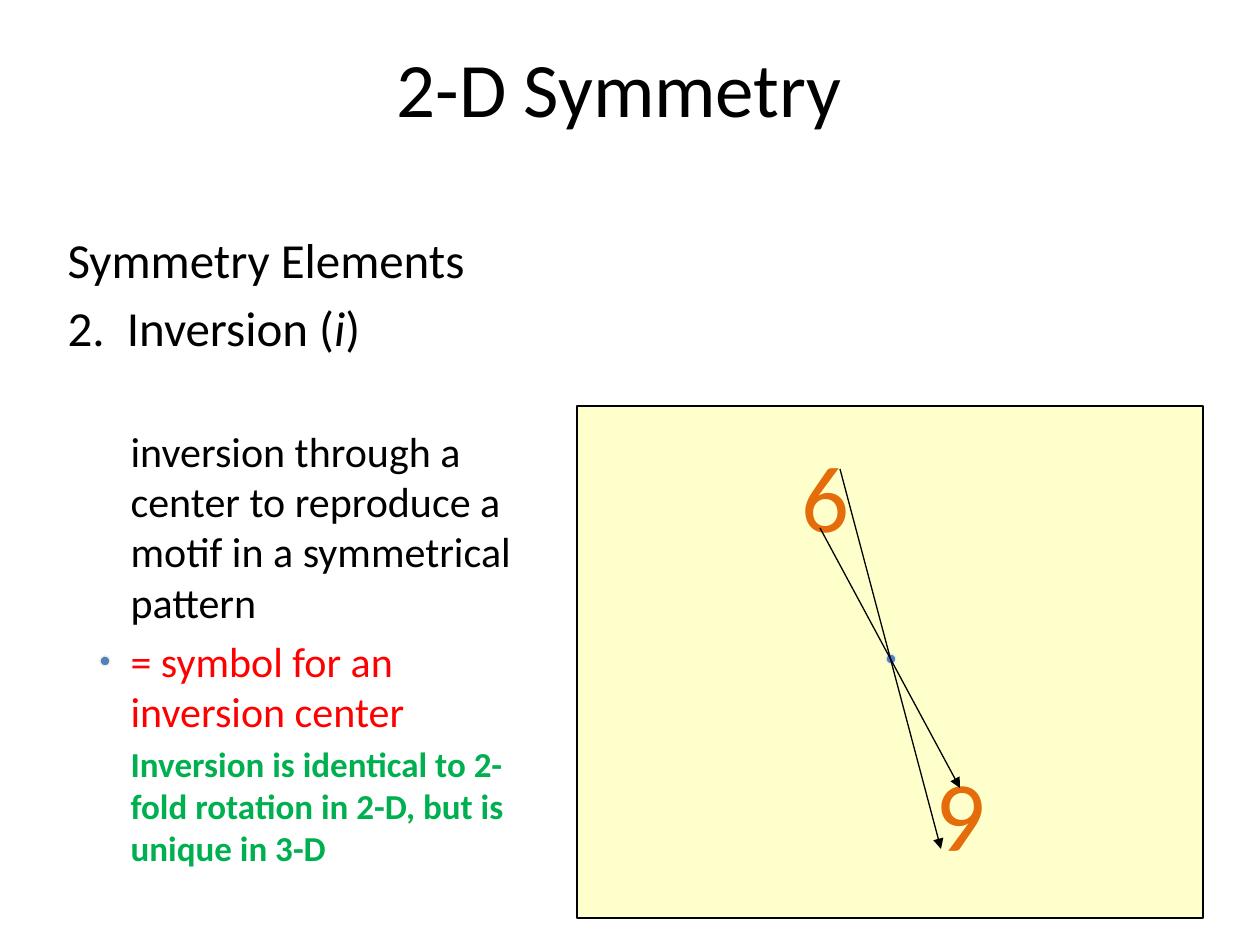
from dataclasses import dataclass
from typing import NamedTuple

from lxml import etree
from pptx import Presentation
from pptx import util as u
from pptx.dml.color import RGBColor
from pptx.enum import shapes as sh, text as tx
from pptx.oxml.ns import qn

SCALE = 914400 / 126


@dataclass(frozen=True)
class Theme:
    font: str = "Calibri"
    ink: str = "000000"
    red: str = "FF0000"
    green: str = "00B050"
    orange: str = "E46C0A"
    panel: str = "FFFFCC"
    dot: str = "4F81BD"
    rim: str = "EEECE1"
    title: int = 44
    head: int = 28
    body: int = 24
    note: int = 20
    motif: int = 54
    line: float = 0.75


class Box(NamedTuple):
    x: int
    y: int
    w: int
    h: int


class Ray(NamedTuple):
    x1: int
    y1: int
    x2: int
    y2: int


class Motif(NamedTuple):
    box: Box
    turn: int


class Line(NamedTuple):
    text: str
    size: int
    color: str
    level: int = 0
    bold: bool = False
    gap: int | None = None


T = Theme()
TITLE = Box(84, 0, 1071, 173)
BODY = Box(55, 223, 512, 697)
PANEL = Box(577, 406, 626, 512)
DOTS = [Box(100, 656, 10, 10), Box(886, 654, 10, 10)]
MOTIFS = [Motif(Box(789, 432, 74, 127), 0), Motif(Box(925, 761, 74, 127), 180)]
RAYS = [Ray(840, 469, 941, 849), Ray(820, 528, 960, 788)]
LINES = [
    Line("Symmetry Elements", T.head, T.ink),
    Line("2.  Inversion (*i*)", T.head, T.ink),
    Line("inversion through a center to reproduce a motif in a symmetrical pattern",
         T.body, T.ink, level=1, gap=39),
    Line("= symbol for an inversion center", T.body, T.red, level=1),
    Line("Inversion is identical to 2-fold rotation in 2-D, but is unique in 3-D",
         T.note, T.green, level=1, bold=True),
]


def px(*vals: int) -> list[u.Emu]:
    """Turn px lengths into EMU."""
    return [u.Emu(round(v * SCALE)) for v in vals]


def place(shape, box: Box) -> None:
    """Move and size a shape to a box."""
    shape.left, shape.top, shape.width, shape.height = px(*box)


def write(para, text: str, *, size: int, color: str = T.ink, bold: bool = False,
          align=tx.PP_ALIGN.LEFT, level: int = 0, gap: int | None = None) -> None:
    """Fill a paragraph, with italics between asterisks."""
    para.alignment, para.level = align, level
    if gap is not None:
        para.space_before = u.Pt(gap)
    for i, part in enumerate(text.split("*")):
        run = para.add_run()
        run.text = part
        font = run.font
        font.name, font.size, font.bold = T.font, u.Pt(size), bold
        font.italic = i % 2 == 1
        font.color.rgb = RGBColor.from_string(color)


def draw_shape(slide, kind, box: Box, fill: str, rim: str) -> None:
    """Draw a filled and outlined preset shape."""
    shape = slide.shapes.add_shape(kind, *px(*box))
    shape.shadow.inherit = False
    shape.fill.solid()
    shape.fill.fore_color.rgb = RGBColor.from_string(fill)
    shape.line.color.rgb = RGBColor.from_string(rim)
    shape.line.width = u.Pt(T.line)


def draw_motif(slide, motif: Motif) -> None:
    """Draw the motif, turned about its middle."""
    shape = slide.shapes.add_textbox(*px(*motif.box))
    shape.rotation = motif.turn
    frame = shape.text_frame
    frame.word_wrap = False
    frame.auto_size = tx.MSO_AUTO_SIZE.SHAPE_TO_FIT_TEXT
    write(frame.paragraphs[0], "6", size=T.motif, color=T.orange)


def draw_ray(slide, ray: Ray) -> None:
    """Draw a thin arrow through the inversion center."""
    line = slide.shapes.add_connector(sh.MSO_CONNECTOR.STRAIGHT, *px(*ray))
    line.line.color.rgb = RGBColor.from_string(T.ink)
    line.line.width = u.Pt(T.line)
    etree.SubElement(line.line._get_or_add_ln(), qn("a:tailEnd"), type="triangle")
    etree.SubElement(line._element.spPr, qn("a:effectLst"))


def main() -> None:
    """Build and save the slide."""
    deck = Presentation()
    deck.slide_width, deck.slide_height = u.Inches(10), u.Inches(7.5)
    slide = deck.slides.add_slide(deck.slide_layouts[0])

    title, body = slide.shapes.title, slide.placeholders[1]
    place(title, TITLE)
    title.text_frame.vertical_anchor = tx.MSO_ANCHOR.MIDDLE
    write(title.text_frame.paragraphs[0], "2-D Symmetry", size=T.title,
          align=tx.PP_ALIGN.CENTER)

    place(body, BODY)
    frame = body.text_frame
    frame.auto_size = tx.MSO_AUTO_SIZE.NONE
    for i, line in enumerate(LINES):
        para = frame.add_paragraph() if i else frame.paragraphs[0]
        write(para, **line._asdict())

    draw_shape(slide, sh.MSO_SHAPE.RECTANGLE, PANEL, T.panel, T.ink)
    for motif in MOTIFS:
        draw_motif(slide, motif)
    for dot in DOTS:
        draw_shape(slide, sh.MSO_SHAPE.OVAL, dot, T.dot, T.rim)
    for ray in RAYS:
        draw_ray(slide, ray)

    deck.save("out.pptx")


if __name__ == "__main__":
    main()
